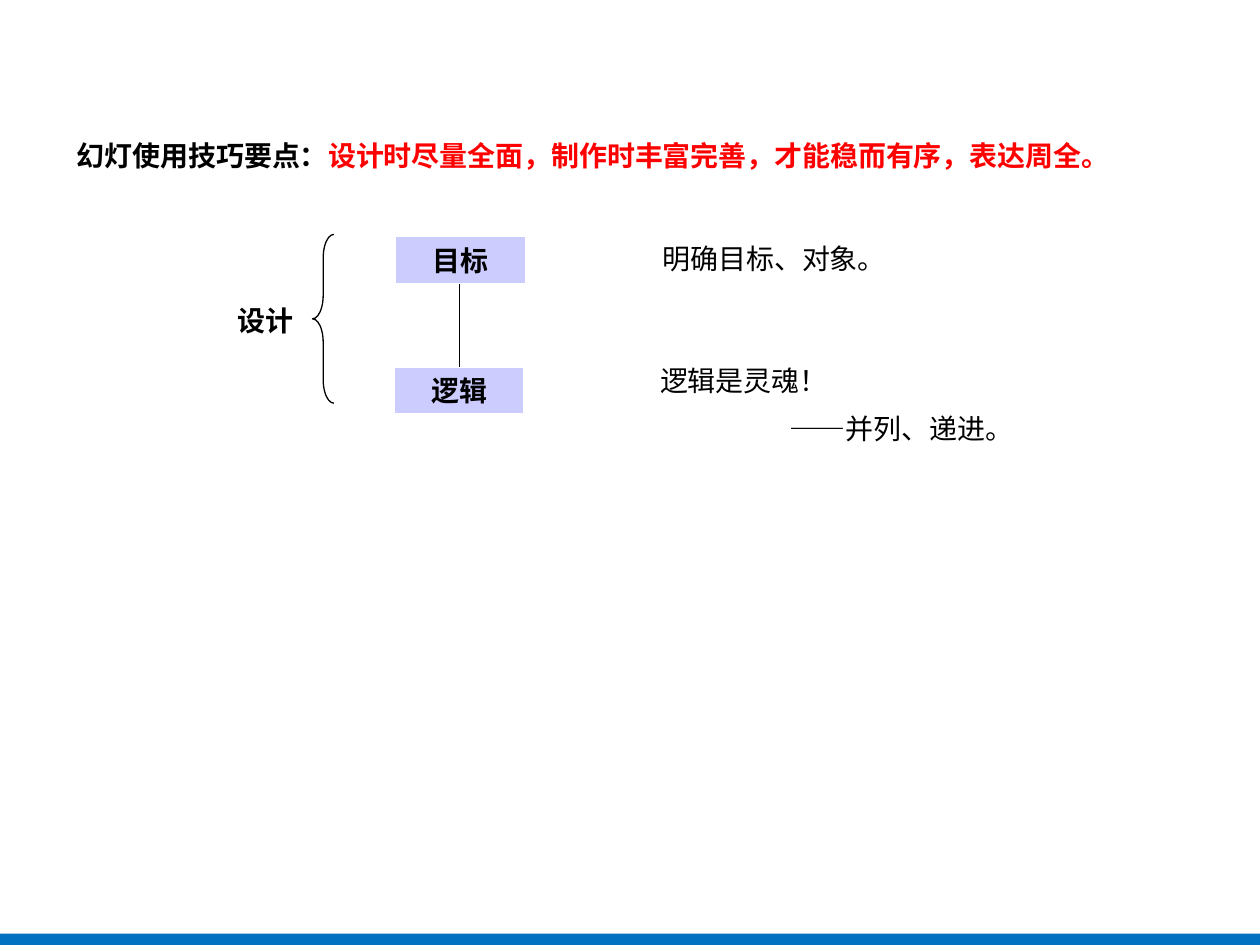
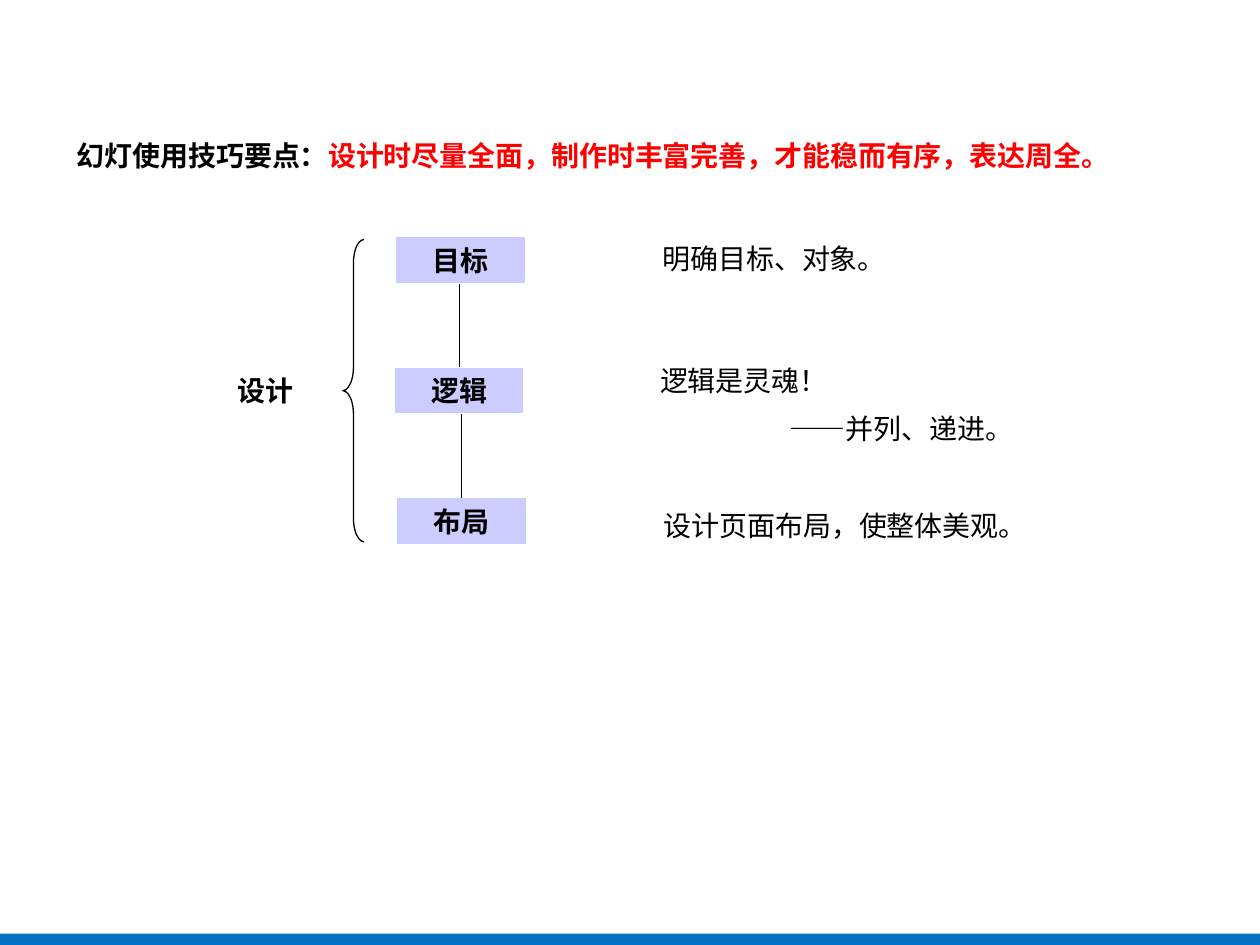
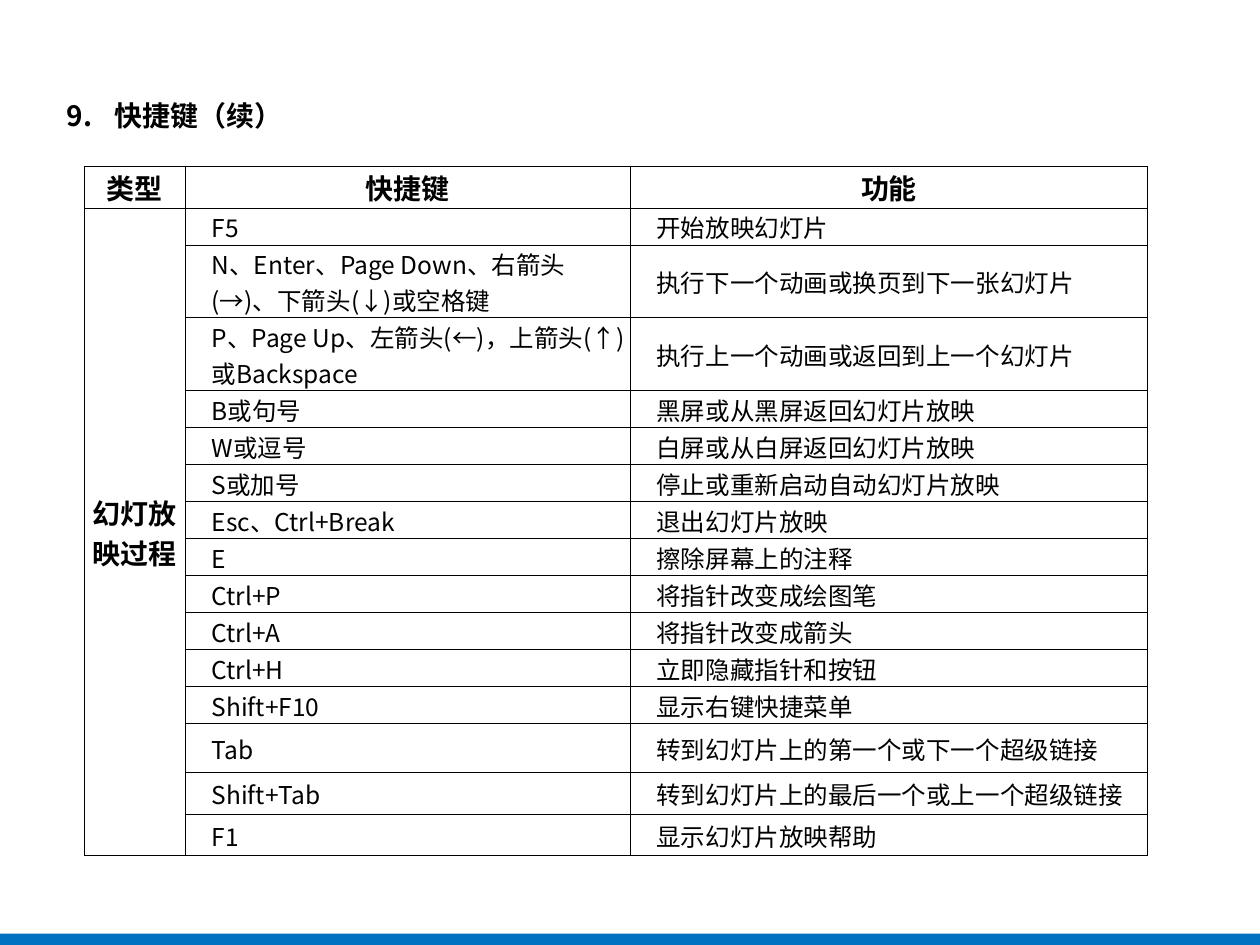
import pptx
import pptx.dml.color
import pptx.enum.shapes
import pptx.enum.text
import pptx.oxml
import pptx.oxml.ns
import pptx.util
from lxml import etree

Inches, Pt = pptx.util.Inches, pptx.util.Pt
qn = pptx.oxml.ns.qn
SHAPE = pptx.enum.shapes.MSO_SHAPE
ALIGN = pptx.enum.text.PP_ALIGN
ANCHOR = pptx.enum.text.MSO_ANCHOR

FONT = "Noto Sans CJK SC"
COLORS = {"text": "000000", "accent": "FF0000", "bar": "0070C0",
          "box": "CCCCFF", "white": "FFFFFF"}

KEY_POINT = [("幻灯使用技巧要点：", "text"),
             ("设计时尽量全面，制作时丰富完善，才能稳而有序，表达周全。", "accent")]

# Step: name, box left, notes as (text, left, top, width, height, line spacing)
STEPS = [
    ("目标", 3.14, [("明确目标、对象。", 5.16, 1.87, 4.19, 0.37, None)]),
    ("逻辑", 3.13, [("逻辑是灵魂！", 5.14, 2.8, 4.19, 0.41, Pt(22)),
                  ("——并列、递进。", 6.17, 3.18, 2.03, 0.41, Pt(22))]),
    ("布局", 3.15, [("设计页面布局，使整体美观。", 5.17, 3.99, 4.71, 0.37, None)]),
]
STEP_TOP, STEP_PITCH, STEP_W, STEP_H = 1.88, 1.035, 1.03, 0.37

# Design slide: number of steps, label top, brace (left, top, width, height)
DESIGN_SLIDES = [
    (2, 2.36, (2.48, 1.86, 0.17, 1.34)),
    (3, 2.91, (2.72, 1.9, 0.17, 2.4)),
]

HEADERS = ["类型", "快捷键", "功能"]
CATEGORY = "幻灯放映过程"
SHORTCUTS = [
    ("F5", "开始放映幻灯片"),
    ("N、Enter、Page Down、右箭头(→)、下箭头(↓)或空格键", "执行下一个动画或换页到下一张幻灯片"),
    ("P、Page Up、左箭头(←)，上箭头(↑)或Backspace", "执行上一个动画或返回到上一个幻灯片"),
    ("B或句号", "黑屏或从黑屏返回幻灯片放映"),
    ("W或逗号", "白屏或从白屏返回幻灯片放映"),
    ("S或加号", "停止或重新启动自动幻灯片放映"),
    ("Esc、Ctrl+Break", "退出幻灯片放映"),
    ("E", "擦除屏幕上的注释"),
    ("Ctrl+P", "将指针改变成绘图笔"),
    ("Ctrl+A", "将指针改变成箭头"),
    ("Ctrl+H", "立即隐藏指针和按钮"),
    ("Shift+F10", "显示右键快捷菜单"),
    ("Tab", "转到幻灯片上的第一个或下一个超级链接"),
    ("Shift+Tab", "转到幻灯片上的最后一个或上一个超级链接"),
    ("F1", "显示幻灯片放映帮助"),
]
COLUMN_WIDTHS = [0.8, 3.53, 4.11]
ROW_HEIGHT = 0.29
TALL_ROWS = {0: 0.33, 2: 0.57, 3: 0.57, 13: 0.39, 14: 0.33, 15: 0.33}


def rgb(name):
    return pptx.dml.color.RGBColor.from_string(COLORS[name])


def inches(box):
    return [Inches(v) for v in box]


def style_run(r, size=16, bold=False, color="text"):
    r.font.size, r.font.bold, r.font.name = Pt(size), bold, FONT
    r.font.color.rgb = rgb(color)
    ea = etree.SubElement(r.font._element, qn("a:ea"))
    ea.set("typeface", FONT)


def write(tf, text, align=ALIGN.LEFT, spacing=None, **style):
    p = tf.paragraphs[0]
    p.text, p.alignment = text, align
    if spacing:
        p.line_spacing = spacing
    style_run(p.runs[0], **style)
    return p


def add_box(slide, kind, box, fill=None, line=None):
    sp = slide.shapes.add_shape(kind, *inches(box))
    sp.shadow.inherit = False
    if fill:
        sp.fill.solid()
        sp.fill.fore_color.rgb = rgb(fill)
    else:
        sp.fill.background()
    if line:
        sp.line.color.rgb = rgb(line)
        sp.line.width = Pt(0.75)
    else:
        sp.line.fill.background()
    return sp


def add_label(slide, text, box, fill, line=None):
    sp = add_box(slide, SHAPE.RECTANGLE, box, fill, line)
    sp.text_frame.vertical_anchor = ANCHOR.MIDDLE
    write(sp.text_frame, text, ALIGN.CENTER, bold=True)


def add_link(slide, x, top, bottom):
    cn = slide.shapes.add_connector(pptx.enum.shapes.MSO_CONNECTOR.STRAIGHT,
                                    *inches((x, top, x, bottom)))
    cn.line.color.rgb = rgb("text")
    cn.line.width = Pt(0.75)
    etree.SubElement(cn._element.spPr, qn("a:effectLst"))


def add_slide(prs, title_parts, title_box):
    """Add a slide with the bottom bar and a title; return it with the title paragraph."""
    slide = prs.slides.add_slide(prs.slide_layouts[5])
    add_box(slide, SHAPE.RECTANGLE, (-0.01, 7.41, 10.03, 0.12), "bar")
    title = slide.shapes.title
    title.left, title.top, title.width, title.height = inches(title_box)
    tf = title.text_frame
    tf.auto_size = pptx.enum.text.MSO_AUTO_SIZE.NONE
    tf.vertical_anchor = ANCHOR.TOP
    p = tf.paragraphs[0]
    p.alignment, p.line_spacing = ALIGN.LEFT, 1.5
    for text, color in title_parts:
        r = p.add_run()
        r.text = text
        style_run(r, bold=True, color=color)
    return slide, p


def add_design_slide(prs, count, label_top, brace_box):
    slide, _ = add_slide(prs, KEY_POINT, (0.51, 0.92, 8.98, 0.5))
    add_label(slide, "设计", (1.54, label_top, 1.14, STEP_H), "white")
    brace = add_box(slide, SHAPE.RIGHT_BRACE, brace_box, line="text")
    brace.rotation = 180
    brace.adjustments[0] = 1.1
    for i, (name, left, notes) in enumerate(STEPS[:count]):
        top = STEP_TOP + i * STEP_PITCH
        add_label(slide, name, (left, top, STEP_W, STEP_H), "box", "white")
        if i:
            add_link(slide, left + STEP_W / 2, top - STEP_PITCH + STEP_H, top)
        for text, *box, spacing in notes:
            tf = slide.shapes.add_textbox(*inches(box)).text_frame
            tf.word_wrap = True
            write(tf, text, spacing=spacing)


def format_cell(cell):
    cell.margin_left = cell.margin_top = cell.margin_right = Inches(0.01)
    cell.margin_bottom = 0
    cell.vertical_anchor = ANCHOR.MIDDLE
    tcPr = cell._tc.get_or_add_tcPr()
    for side in ("lnL", "lnR", "lnT", "lnB"):
        ln = etree.SubElement(tcPr, qn("a:" + side), w=str(Pt(0.5)))
        fill = etree.SubElement(ln, qn("a:solidFill"))
        etree.SubElement(fill, qn("a:srgbClr"), val=COLORS["text"])
    cell.fill.background()


def add_shortcut_slide(prs):
    slide, p = add_slide(prs, [("快捷键（续）", "text")], (0.43, 0.6, 9.06, 0.46))
    pPr = p._p.get_or_add_pPr()
    pPr.set("marL", str(Inches(0.38)))
    pPr.set("indent", str(-Inches(0.38)))
    etree.SubElement(pPr, qn("a:buFont"), typeface="+mj-lt")
    etree.SubElement(pPr, qn("a:buAutoNum"), type="arabicPeriod", startAt="9")

    heights = [TALL_ROWS.get(i, ROW_HEIGHT) for i in range(len(SHORTCUTS) + 1)]
    box = (0.67, 1.32, sum(COLUMN_WIDTHS), sum(heights))
    table = slide.shapes.add_table(len(heights), len(HEADERS), *inches(box)).table
    table.first_row = table.horz_banding = False
    for column, width in zip(table.columns, COLUMN_WIDTHS):
        column.width = Inches(width)
    for row, height in zip(table.rows, heights):
        row.height = Inches(height)
    for cell in table.iter_cells():
        format_cell(cell)
    for c, text in enumerate(HEADERS):
        table.cell(0, c).vertical_anchor = ANCHOR.BOTTOM
        write(table.cell(0, c).text_frame, text, ALIGN.CENTER, bold=True)
    table.cell(1, 0).merge(table.cell(len(SHORTCUTS), 0))
    write(table.cell(1, 0).text_frame, CATEGORY, ALIGN.CENTER, bold=True)
    for r, texts in enumerate(SHORTCUTS, 1):
        for c, text in enumerate(texts, 1):
            p = write(table.cell(r, c).text_frame, text, size=14)
            p._p.get_or_add_pPr().set("marL", str(Inches(0.2)))


def main():
    prs = pptx.Presentation()
    prs.slide_width, prs.slide_height = Inches(10), Inches(7.5)
    for design in DESIGN_SLIDES:
        add_design_slide(prs, *design)
    add_shortcut_slide(prs)
    prs.save("out.pptx")


if __name__ == "__main__":
    main()
